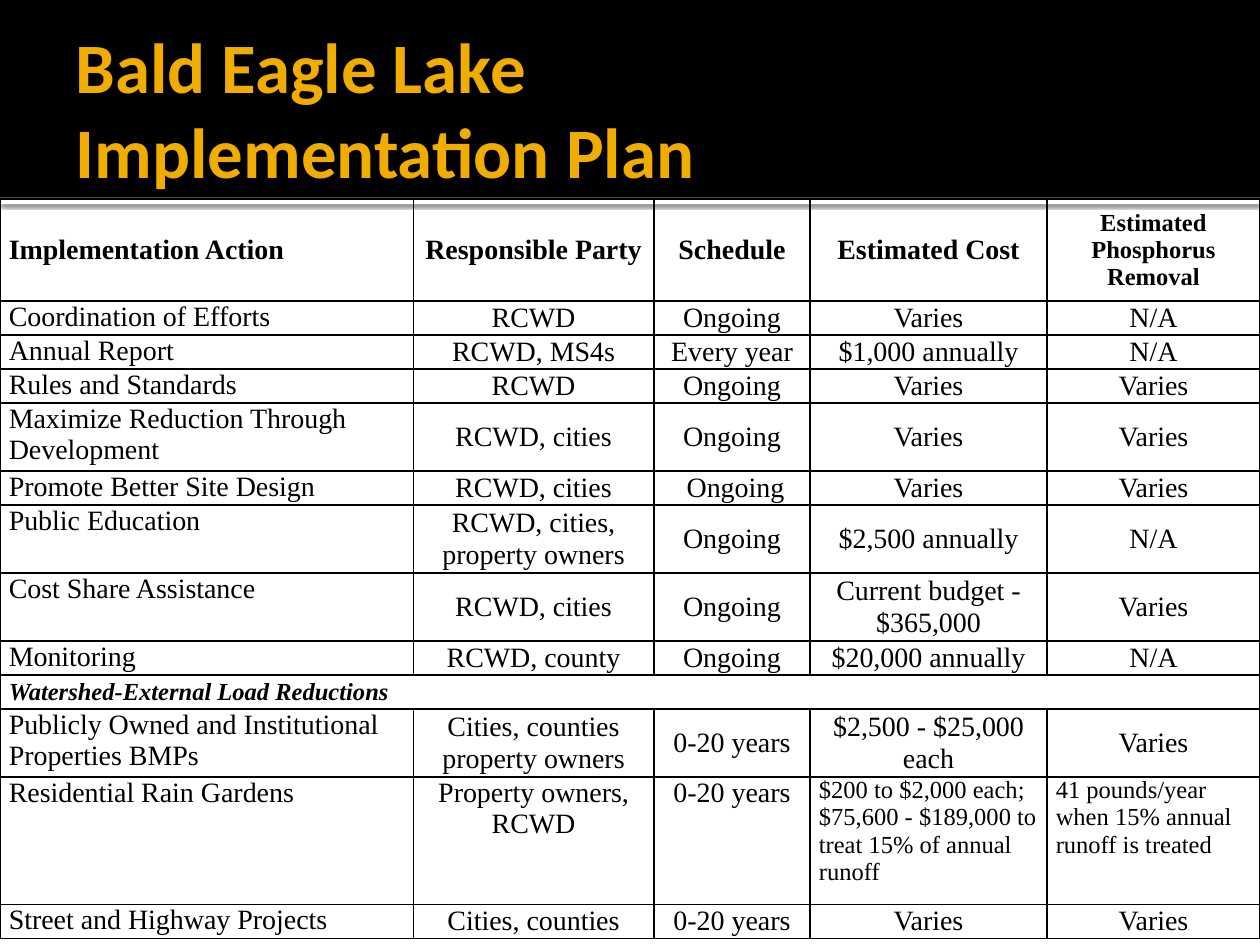
from lxml.etree import SubElement
from pptx import Presentation
from pptx.dml.color import RGBColor
from pptx.enum.shapes import MSO_SHAPE
from pptx.enum.text import MSO_ANCHOR, MSO_AUTO_SIZE, PP_ALIGN
from pptx.oxml import parse_xml
from pptx.oxml.ns import nsdecls, qn
from pptx.util import Inches, Pt

THEME = {
    "black": RGBColor(0, 0, 0), "white": RGBColor(255, 255, 255),
    "gold": RGBColor(0xF0, 0xAD, 0x00),
    "title_font": "Calibri", "table_font": "Times New Roman",
    "title_size": Pt(40.5), "text_size": Pt(16), "small_size": Pt(14),
}
BAND_HEIGHT = 1.57
COLUMN_WIDTHS = [3.28, 1.91, 1.24, 1.88, 1.69]
ROW_UNIT = 0.27
ROW_HEIGHTS = [0.81] + [ROW_UNIT * lines for lines in (1, 1, 1, 2, 1, 2, 2, 1, 1, 2)] + [1.01, ROW_UNIT]
HEADER_ROW, SECTION_ROW, GARDEN_ROW = 0, 9, 11
ROWS = [
    ["Implementation Action", "Responsible Party", "Schedule", "Estimated Cost", "Estimated Phosphorus Removal"],
    ["Coordination of Efforts", "RCWD", "Ongoing", "Varies", "N/A"],
    ["Annual Report", "RCWD, MS4s", "Every year", "$1,000 annually", "N/A"],
    ["Rules and Standards", "RCWD", "Ongoing", "Varies", "Varies"],
    ["Maximize Reduction Through Development", "RCWD, cities", "Ongoing", "Varies", "Varies"],
    ["Promote Better Site Design", "RCWD, cities", " Ongoing", "Varies", "Varies"],
    ["Public Education", "RCWD, cities, property owners", "Ongoing", "$2,500 annually", "N/A"],
    ["Cost Share Assistance", "RCWD, cities", "Ongoing", "Current budget - $365,000", "Varies"],
    ["Monitoring", "RCWD, county", "Ongoing", "$20,000 annually", "N/A"],
    ["Watershed-External Load Reductions", "", "", "", ""],
    ["Publicly Owned and Institutional Properties BMPs", "Cities, counties property owners", "0-20 years",
     "$2,500 - $25,000 each", "Varies"],
    ["Residential Rain Gardens", "Property owners, RCWD", "0-20 years",
     "$200 to $2,000 each; $75,600 - $189,000 to treat 15% of annual runoff",
     "41 pounds/year when 15% annual runoff is treated"],
    ["Street and Highway Projects", "Cities, counties", "0-20 years", "Varies", "Varies"],
]


def add_bar(slide, top, height, color):
    bar = slide.shapes.add_shape(MSO_SHAPE.RECTANGLE, 0, Inches(top), Inches(10), Inches(height))
    bar.shadow.inherit = False
    bar.fill.solid()
    bar.fill.fore_color.rgb = color
    bar.line.fill.background()
    return bar


def set_borders(cell, top_width, bottom_width):
    properties = cell._tc.get_or_add_tcPr()
    widths = {"a:lnL": 1, "a:lnR": 1, "a:lnT": top_width, "a:lnB": bottom_width}
    for position, (side, width) in enumerate(widths.items()):
        line = parse_xml(
            f'<{side} {nsdecls("a")} w="{Pt(width)}"><a:solidFill>'
            f'<a:srgbClr val="{THEME["black"]}"/></a:solidFill></{side}>')
        properties.insert(position, line)


presentation = Presentation()
presentation.slide_width, presentation.slide_height = Inches(10), Inches(7.5)
slide = presentation.slides.add_slide(presentation.slide_layouts[5])

# Title band with a shadowed white strip below it
strip = add_bar(slide, BAND_HEIGHT, 0.05, THEME["white"])
shadow = SubElement(
    strip._element.spPr.find(qn("a:effectLst")), qn("a:outerShdw"),
    blurRad=str(Pt(2.5)), dist=str(Pt(0.8)), dir="5400000", algn="t", rotWithShape="0")
shadow_color = SubElement(shadow, qn("a:srgbClr"), val=str(THEME["black"]))
SubElement(shadow_color, qn("a:alpha"), val="60000")
add_bar(slide, 0, BAND_HEIGHT, THEME["black"])

# Title, brought in front of the band
title = slide.shapes.title
slide.shapes._spTree.append(title._element)
title.left, title.top, title.width, title.height = Inches(0.5), Inches(0.17), Inches(9), Inches(1.37)
frame = title.text_frame
frame.auto_size = MSO_AUTO_SIZE.NONE
frame.word_wrap = True
frame.vertical_anchor = MSO_ANCHOR.MIDDLE
frame.margin_left = Inches(0.1)
frame.margin_right = frame.margin_top = frame.margin_bottom = Inches(0.05)
paragraph = frame.paragraphs[0]
paragraph.add_run().text = "Bald Eagle Lake"
paragraph.add_line_break()
paragraph.add_run().text = "Implementation Plan"
paragraph.alignment = PP_ALIGN.LEFT
paragraph.font.name = THEME["title_font"]
paragraph.font.size = THEME["title_size"]
paragraph.font.bold = True
paragraph.font.color.rgb = THEME["gold"]

# Table grid
table = slide.shapes.add_table(
    len(ROWS), len(COLUMN_WIDTHS), 0, Inches(1.58), Inches(10), Inches(sum(ROW_HEIGHTS))).table
table.first_row = table.horz_banding = False
for column, width in zip(table.columns, COLUMN_WIDTHS):
    column.width = Inches(width)
for row, height in zip(table.rows, ROW_HEIGHTS):
    row.height = Inches(height)

# Table cells
for row_index, texts in enumerate(ROWS):
    for column_index, text in enumerate(texts):
        is_header = row_index == HEADER_ROW
        is_section = row_index == SECTION_ROW
        is_note = row_index == GARDEN_ROW and column_index >= 3
        is_top = row_index == GARDEN_ROW or (column_index == 0 and not (is_header or is_section))
        is_small = is_section or is_note or (is_header and column_index == 4)

        cell = table.cell(row_index, column_index)
        cell.fill.background()
        set_borders(cell, 1.5 if row_index == 1 else 1, 1.5 if is_header else 1)
        cell.margin_left = cell.margin_right = Inches(0.07)
        cell.margin_top = cell.margin_bottom = 0
        cell.vertical_anchor = MSO_ANCHOR.TOP if is_top else MSO_ANCHOR.MIDDLE
        cell.text = text
        paragraph = cell.text_frame.paragraphs[0]
        paragraph.alignment = PP_ALIGN.LEFT if column_index == 0 or is_note else PP_ALIGN.CENTER
        paragraph.font.name = THEME["table_font"]
        paragraph.font.size = THEME["small_size" if is_small else "text_size"]
        paragraph.font.bold = is_header or is_section
        paragraph.font.italic = is_section
        paragraph.font.color.rgb = THEME["black"]

# Section heading spans the full width
table.cell(SECTION_ROW, 0).merge(table.cell(SECTION_ROW, len(COLUMN_WIDTHS) - 1))

presentation.save("out.pptx")
